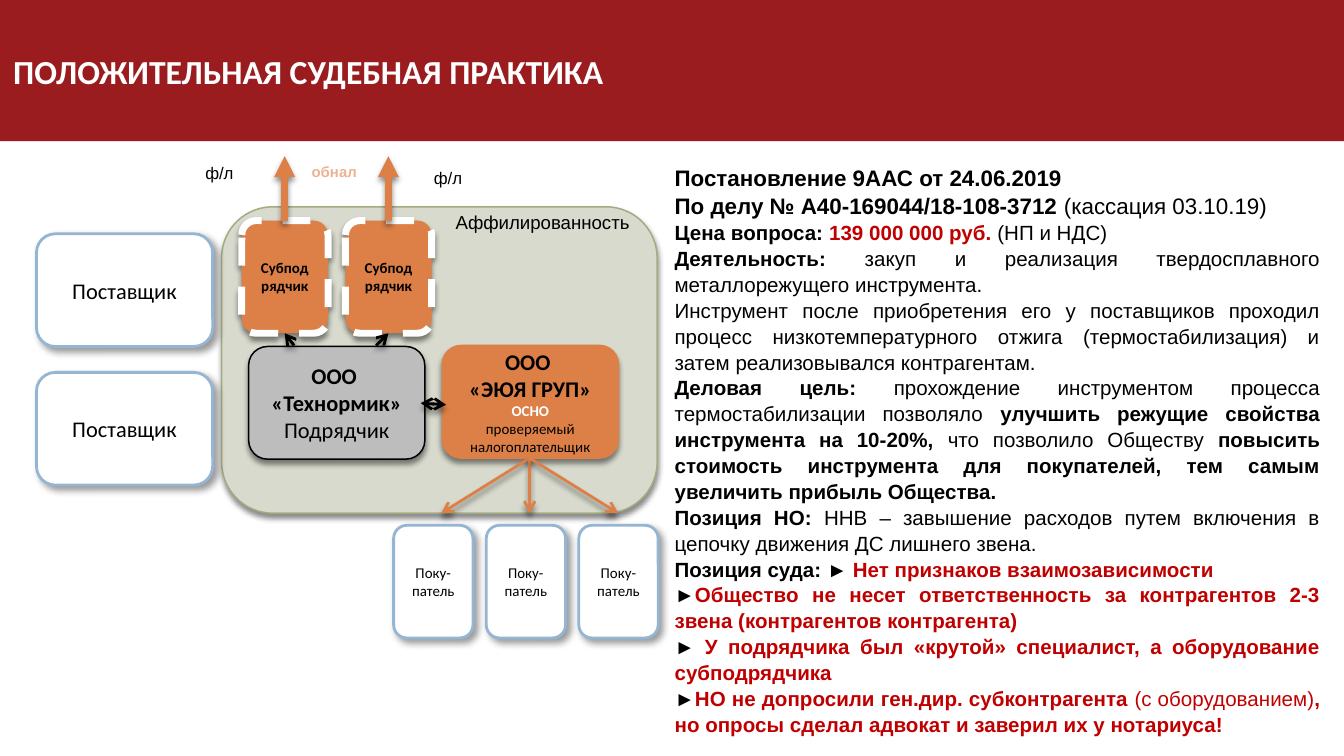
from lxml.etree import SubElement
from pptx import Presentation
from pptx.dml.color import RGBColor
from pptx.enum.dml import MSO_LINE
from pptx.enum.shapes import MSO_CONNECTOR, MSO_SHAPE
from pptx.enum.text import MSO_ANCHOR, MSO_AUTO_SIZE, PP_ALIGN
from pptx.oxml.ns import qn
from pptx.util import Cm, Pt

COLORS = {
    "white": "FFFFFF", "black": "000000", "banner": "9A1C1F", "red": "C00000",
    "orange": "DD8047", "peach": "EBB391", "blue": "94B6D2", "gray": "BDBDBD",
    "sage": "D8DACD", "olive": "A5AB81",
}
DOWN_SHADOW = (45, 3, 2.4, 90)
CORNER_SHADOW = (40, 4, 3, 45)
BOX_W, BOX_H = 3.33, 2.13

RULING = [
    (12, PP_ALIGN.LEFT, [("Постановление 9ААС от 24.06.2019", "bold")]),
    (12, PP_ALIGN.LEFT, [("По делу № А40-169044/18-108-3712 ", "bold"),
                         ("(кассация 03.10.19)", "")]),
] + [(11, PP_ALIGN.JUSTIFY, runs) for runs in [
    [("Цена вопроса: ", "bold"), ("139 000 000 руб. ", "bold red"), ("(НП и НДС)", "")],
    [("Деятельность:", "bold"),
     (" закуп и реализация твердосплавного металлорежущего инструмента.", "")],
    [("Инструмент после приобретения его у поставщиков проходил процесс "
      "низкотемпературного отжига (термостабилизация) и затем реализовывался "
      "контрагентам.", "")],
    [("Деловая цель: ", "bold"),
     ("прохождение инструментом процесса термостабилизации позволяло ", ""),
     ("улучшить режущие свойства инструмента на 10-20%, ", "bold"),
     ("что позволило Обществу ", ""),
     ("повысить стоимость инструмента для покупателей, тем самым увеличить "
      "прибыль Общества.", "bold")],
    [("Позиция НО: ", "bold"),
     ("ННВ – завышение расходов путем включения в цепочку движения ДС "
      "лишнего звена.", "")],
    [("Позиция суда: ", "bold"), ("► ", "bold marker"),
     ("Нет признаков взаимозависимости", "bold red")],
    [("►", "bold marker"),
     ("Общество не несет ответственность за контрагентов 2-3 звена "
      "(контрагентов контрагента)", "bold red")],
    [("► ", "bold marker"),
     ("У подрядчика был «крутой» специалист, а оборудование субподрядчика",
      "bold red")],
    [("►", "bold marker"),
     ("НО не допросили ген.дир. субконтрагента ", "bold red"),
     ("(с оборудованием)", "red"),
     (", но опросы сделал адвокат и заверил их у нотариуса!", "bold red")],
]]


def rgb(name):
    """Return the palette colour with this name."""
    return RGBColor.from_string(COLORS[name])


def set_shadow(s, shadow=None):
    """Give a shape or connector an effect list, with an outer shadow if any."""
    effects = SubElement(s._element.spPr, qn("a:effectLst"))
    if shadow:
        alpha, blur, dist, angle = shadow
        outer = SubElement(effects, qn("a:outerShdw"), blurRad=str(Pt(blur)),
                           dist=str(Pt(dist)), dir=str(angle * 60000), rotWithShape="0")
        color = SubElement(outer, qn("a:srgbClr"), val=COLORS["black"])
        SubElement(color, qn("a:alpha"), val=str(alpha * 1000))


def write_lines(tf, lines, font="Calibri", align=PP_ALIGN.CENTER):
    """Write one paragraph per (text, size, bold, colour) entry."""
    for i, (text, size, bold, color) in enumerate(lines):
        p = tf.add_paragraph() if i else tf.paragraphs[0]
        p.text, p.alignment = text, align
        p.font.name, p.font.size, p.font.bold = font, Pt(size), bold
        p.font.color.rgb = rgb(color)


def add_box(sp, x, y, w, h, fill, line, lines=(), width=0.79, shadow=DOWN_SHADOW):
    """Add a rounded box with centred text."""
    s = sp.add_shape(MSO_SHAPE.ROUNDED_RECTANGLE, Cm(x), Cm(y), Cm(w), Cm(h))
    s.fill.solid()
    s.fill.fore_color.rgb = rgb(fill)
    s.line.color.rgb = rgb(line)
    s.line.width = Pt(width)
    set_shadow(s, shadow)
    tf = s.text_frame
    tf.word_wrap, tf.vertical_anchor = True, MSO_ANCHOR.MIDDLE
    write_lines(tf, lines)
    return s


def add_arrow(sp, start, end, color, width=1.5, tip="arrow", both=False):
    """Add a straight arrow between two points."""
    s = sp.add_connector(MSO_CONNECTOR.STRAIGHT, *(Cm(v) for v in start + end))
    s.line.color.rgb = rgb(color)
    s.line.width = Pt(width)
    for end_tag in ("a:headEnd", "a:tailEnd") if both else ("a:tailEnd",):
        SubElement(s.line._get_or_add_ln(), qn(end_tag), type=tip)
    set_shadow(s, DOWN_SHADOW)


def add_textbox(sp, x, y, w, h):
    """Add a wrapping text box and return its text frame."""
    tf = sp.add_textbox(Cm(x), Cm(y), Cm(w), Cm(h)).text_frame
    tf.word_wrap, tf.auto_size = True, MSO_AUTO_SIZE.SHAPE_TO_FIT_TEXT
    return tf


def add_label(sp, x, y, w, h, text, size, bold=False, color="black"):
    """Add a one-line caption."""
    write_lines(add_textbox(sp, x, y, w, h), [(text, size, bold, color)],
                "Arial", PP_ALIGN.LEFT)


def add_banner(sp, text):
    """Add the title band across the top."""
    s = sp.add_shape(MSO_SHAPE.RECTANGLE, 0, 0, Cm(25.4), Cm(2.67))
    s.fill.solid()
    s.fill.fore_color.rgb = rgb("banner")
    s.line.fill.background()
    s.shadow.inherit = False
    s.text_frame.vertical_anchor = MSO_ANCHOR.MIDDLE
    write_lines(s.text_frame, [(text, 18, True, "white")], align=PP_ALIGN.LEFT)


def add_ruling(sp):
    """Add the summary of the court ruling."""
    tf = add_textbox(sp, 12.5, 2.95, 12.7, 10.69)
    for i, (size, align, runs) in enumerate(RULING):
        p = tf.add_paragraph() if i else tf.paragraphs[0]
        p.alignment, p.line_spacing, p.font.size = align, 1.05, Pt(size)
        for text, style in runs:
            r = p.add_run()
            r.text = text
            r.font.name = "Times New Roman" if "marker" in style else "Arial"
            r.font.bold = "bold" in style
            r.font.color.rgb = rgb("red" if "red" in style else "black")


def add_scheme(sp):
    """Add the diagram of suppliers, contractors and buyers."""
    add_box(sp, 4.19, 3.91, 8.23, 5.79, "sage", "olive")
    add_box(sp, 8.36, 6.53, BOX_W, BOX_H, "orange", "orange", [
        ("ООО ", 12, True, "black"), ("«ЭЮЯ ГРУП»", 12, True, "black"),
        ("ОСНО", 8, True, "white"),
        ("проверяемый налогоплательщик", 8, False, "black")])
    add_box(sp, 4.7, 6.55, BOX_W, BOX_H, "gray", "black", [
        ("ООО ", 12, True, "black"), ("«Технормик»", 12, True, "black"),
        ("Подрядчик", 12, False, "black")])
    for y in (4.42, 7.04):
        add_box(sp, 0.69, y, BOX_W, BOX_H, "white", "blue",
                [("Поставщик", 12, False, "black")], 1.5, CORNER_SHADOW)
    for i in range(3):
        add_box(sp, 7.44 + 1.75 * i, 9.93, 1.5, BOX_H, "white", "blue",
                [(t, 8, False, "black") for t in ("Поку-", "патель")], 1.5, CORNER_SHADOW)
        add_arrow(sp, (10.01, 8.66), (8.34 + 1.67 * i, 9.7), "orange")
    add_label(sp, 8.36, 3.86, 4.75, 1.45, "Аффилированность", 10)
    for x, foot in ((4.57, 5.56), (6.53, 7.11)):
        s = add_box(sp, x, 4.17, 1.63, BOX_H, "orange", "white",
                    [("Субподрядчик", 8, True, "black")], 3.75)
        s.line.dash_style = MSO_LINE.DASH
        middle = x + 0.81
        add_arrow(sp, (foot, 6.53), (middle, 6.3), "black")
        add_arrow(sp, (middle, 4.17), (middle, 2.95), "orange", 3.75, "triangle")
    add_arrow(sp, (7.95, 7.62), (8.43, 7.65), "black", both=True)
    add_label(sp, 5.64, 2.95, 1.65, 0.61, "обнал", 8, True, "peach")
    for x, y in ((3.63, 2.95), (7.95, 3.05)):
        add_label(sp, x, y, 1.07, 0.64, "ф/л", 9)


def main():
    """Build the slide and save it."""
    prs = Presentation()
    prs.slide_width, prs.slide_height = Cm(25.4), Cm(14.29)
    sp = prs.slides.add_slide(prs.slide_layouts[6]).shapes
    add_banner(sp, "ПОЛОЖИТЕЛЬНАЯ СУДЕБНАЯ ПРАКТИКА")
    add_scheme(sp)
    add_ruling(sp)
    prs.save("out.pptx")


if __name__ == "__main__":
    main()
